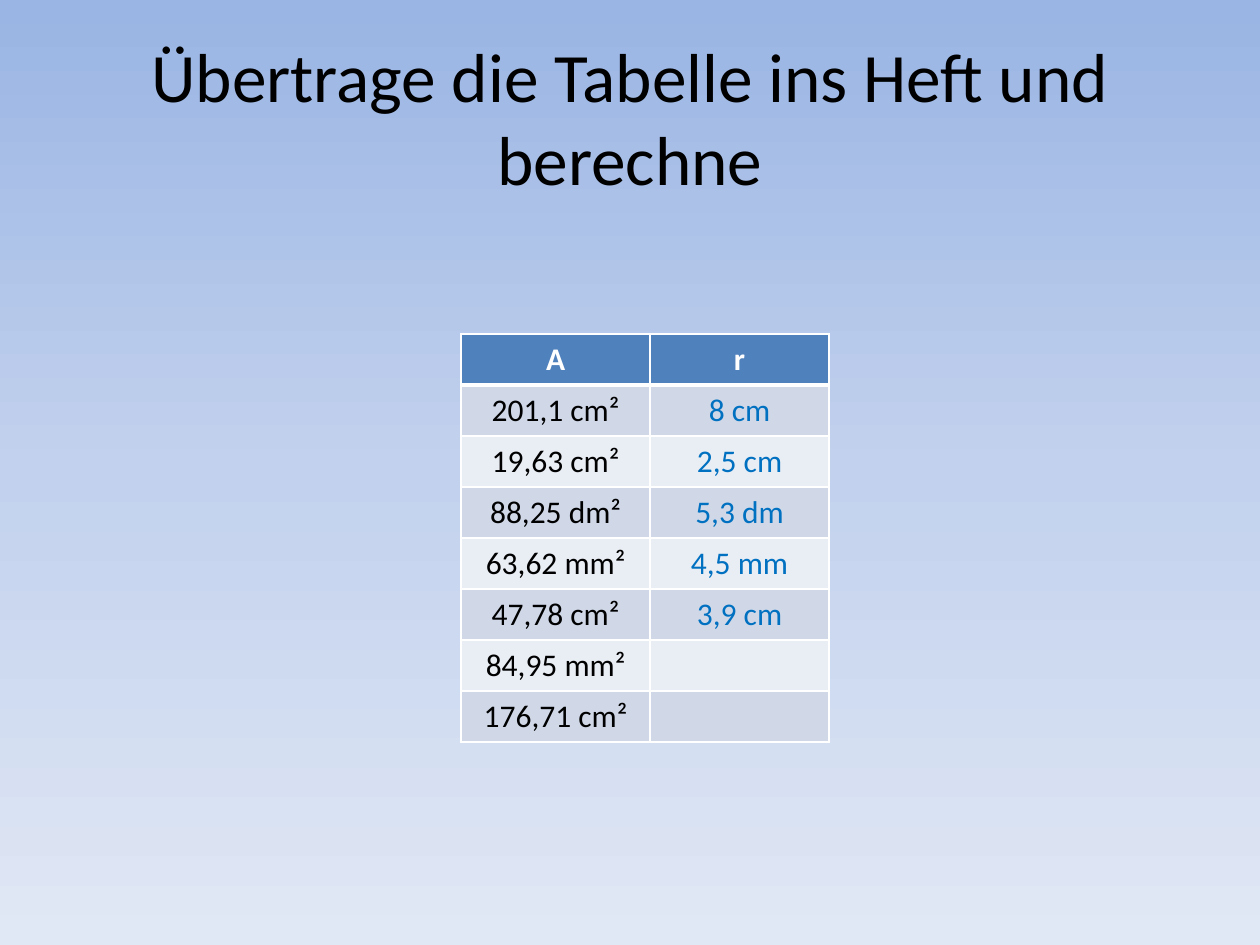
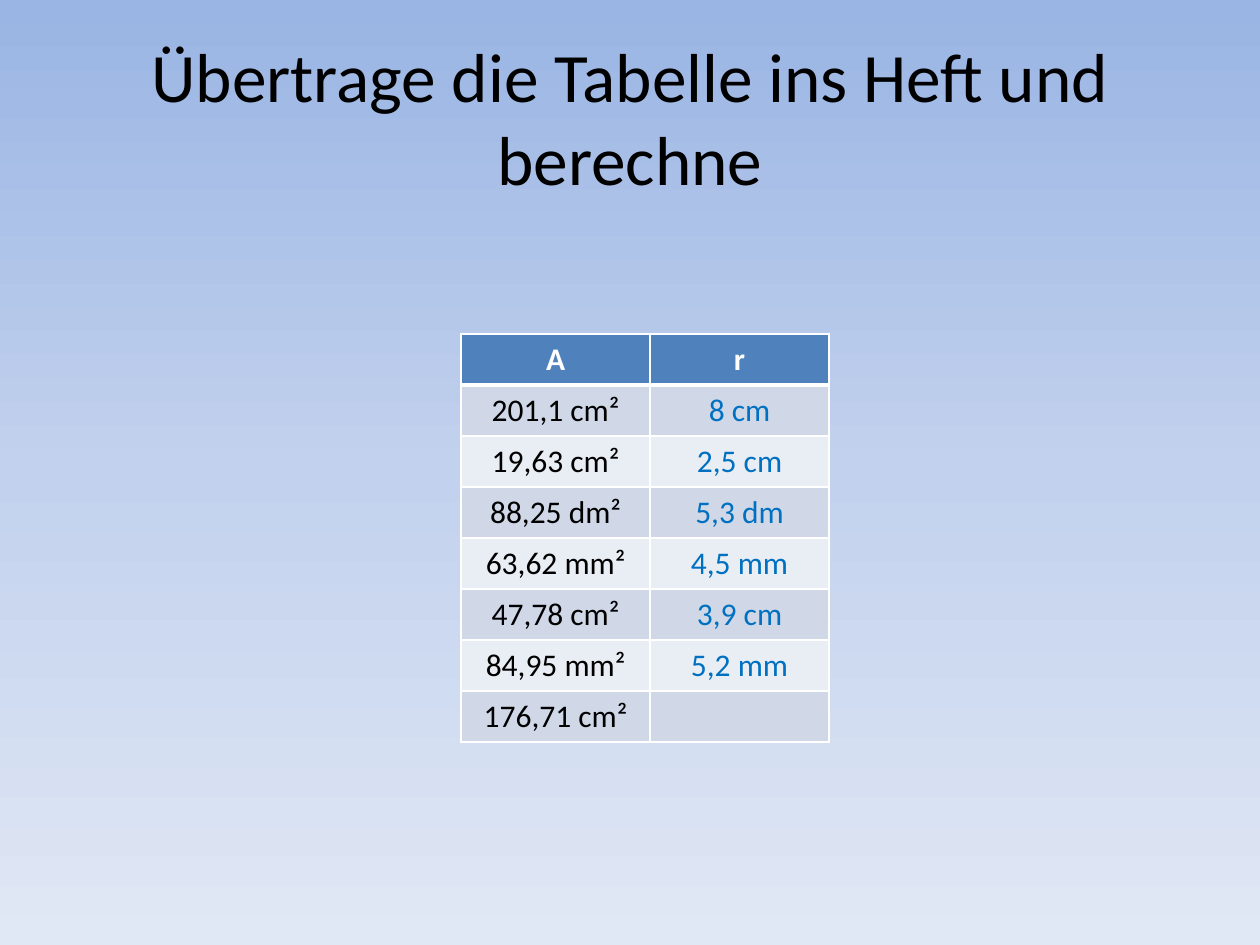
from lxml import etree
from pptx import Presentation, util as u
from pptx.dml.color import RGBColor
from pptx.enum import text
from pptx.oxml.ns import qn

WIDTH, HEIGHT = u.Inches(10), u.Inches(7.5)
FONT = "Calibri"
BLACK, WHITE, ANSWER_BLUE = "000000", "FFFFFF", "0070C0"
HEADER_FILL, BAND_FILLS = "4F81BD", ("D0D8E8", "E9EDF4")
BACKGROUND_STOPS = {0: "9AB5E4", 50: "C2D1ED", 100: "E1E8F5"}

TITLE = "Übertrage die Tabelle ins Heft und berechne"
HEADERS = ("A", "r")
AREAS = ("201,1 cm²", "19,63 cm²", "88,25 dm²", "63,62 mm²",
         "47,78 cm²", "84,95 mm²", "176,71 cm²")
RADII = ("8 cm", "2,5 cm", "5,3 dm", "4,5 mm", "3,9 cm", "5,2 mm")
ANSWERS_SHOWN = (5, 6)

TABLE_LEFT, TABLE_TOP, TABLE_HEIGHT = u.Inches(3.66), u.Inches(2.65), u.Inches(3.24)
COLUMN_WIDTHS = (u.Inches(1.5), u.Inches(1.42))


def color(value):
    return RGBColor.from_string(value)


def apply_format(target, values):
    for name, value in values.items():
        setattr(target, name, value)


def set_background(master):
    fill = master.background.fill
    fill.gradient()
    fill.gradient_angle = 270
    stops = master.element.find(".//" + qn("a:gsLst"))
    for stop in list(stops):
        stops.remove(stop)
    for percent, value in BACKGROUND_STOPS.items():
        stop = etree.SubElement(stops, qn("a:gs"), pos=str(percent * 1000))
        etree.SubElement(stop, qn("a:srgbClr"), val=value)


def write_text(frame, content, size, value, bold=False):
    paragraph = frame.paragraphs[0]
    paragraph.alignment = text.PP_ALIGN.CENTER
    if content:
        run = paragraph.add_run()
        run.text = content
        apply_format(run.font, {"name": FONT, "size": u.Pt(size), "bold": bold})
        run.font.color.rgb = color(value)


def add_title(slide):
    box = slide.shapes.add_textbox(
        int(WIDTH * 0.05), int(HEIGHT * 0.04), int(WIDTH * 0.9), u.Inches(1.25))
    apply_format(box.text_frame, {
        "word_wrap": True, "vertical_anchor": text.MSO_ANCHOR.MIDDLE})
    write_text(box.text_frame, TITLE, 39.6, BLACK)


def set_borders(cell, widths):
    properties = cell._tc.get_or_add_tcPr()
    for side, width in zip("LRTB", widths):
        line = etree.SubElement(properties, qn(f"a:ln{side}"), w=str(u.Pt(width)))
        fill = etree.SubElement(line, qn("a:solidFill"))
        etree.SubElement(fill, qn("a:srgbClr"), val=WHITE)


def style_cell(cell, row):
    set_borders(cell, (1, 1, 3 if row == 1 else 1, 3 if row == 0 else 1))
    cell.fill.solid()
    fill = BAND_FILLS[(row - 1) % 2] if row else HEADER_FILL
    cell.fill.fore_color.rgb = color(fill)


def add_circle_table(slide, answers):
    radii = [radius if index < answers else ""
             for index, radius in enumerate(RADII + ("",))]
    rows = [HEADERS, *zip(AREAS, radii)]
    table = slide.shapes.add_table(
        len(rows), len(HEADERS), TABLE_LEFT, TABLE_TOP,
        sum(COLUMN_WIDTHS), TABLE_HEIGHT).table
    for column, width in zip(table.columns, COLUMN_WIDTHS):
        column.width = width
    for row, contents in enumerate(rows):
        for column, content in enumerate(contents):
            cell = table.cell(row, column)
            style_cell(cell, row)
            value = (BLACK, ANSWER_BLUE)[column] if row else WHITE
            write_text(cell.text_frame, content, 18, value, bold=row == 0)


def main():
    presentation = Presentation()
    apply_format(presentation, {"slide_width": WIDTH, "slide_height": HEIGHT})
    set_background(presentation.slide_master)
    for answers in ANSWERS_SHOWN:
        slide = presentation.slides.add_slide(presentation.slide_layouts[6])
        add_title(slide)
        add_circle_table(slide, answers)
    presentation.save("out.pptx")


if __name__ == "__main__":
    main()
